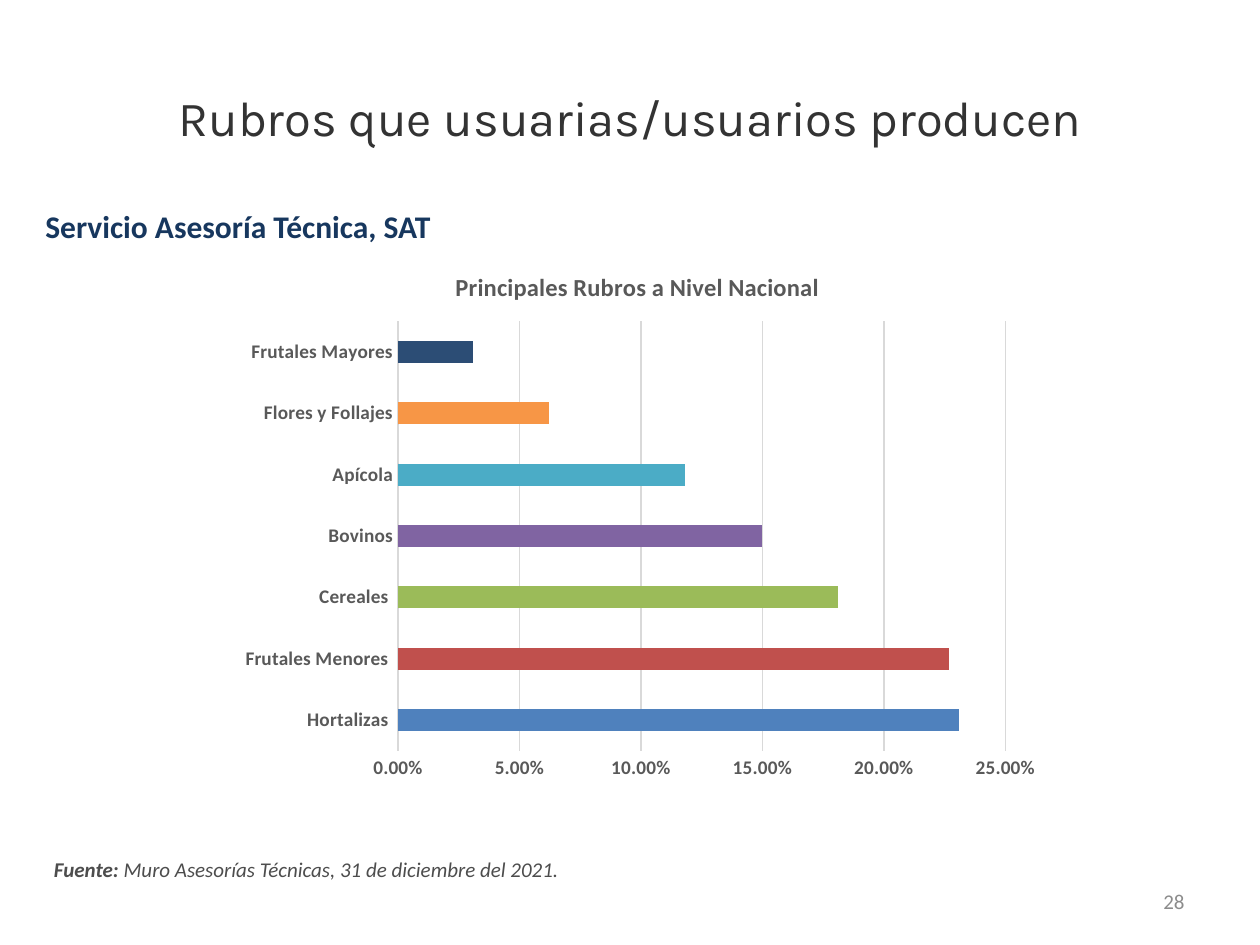
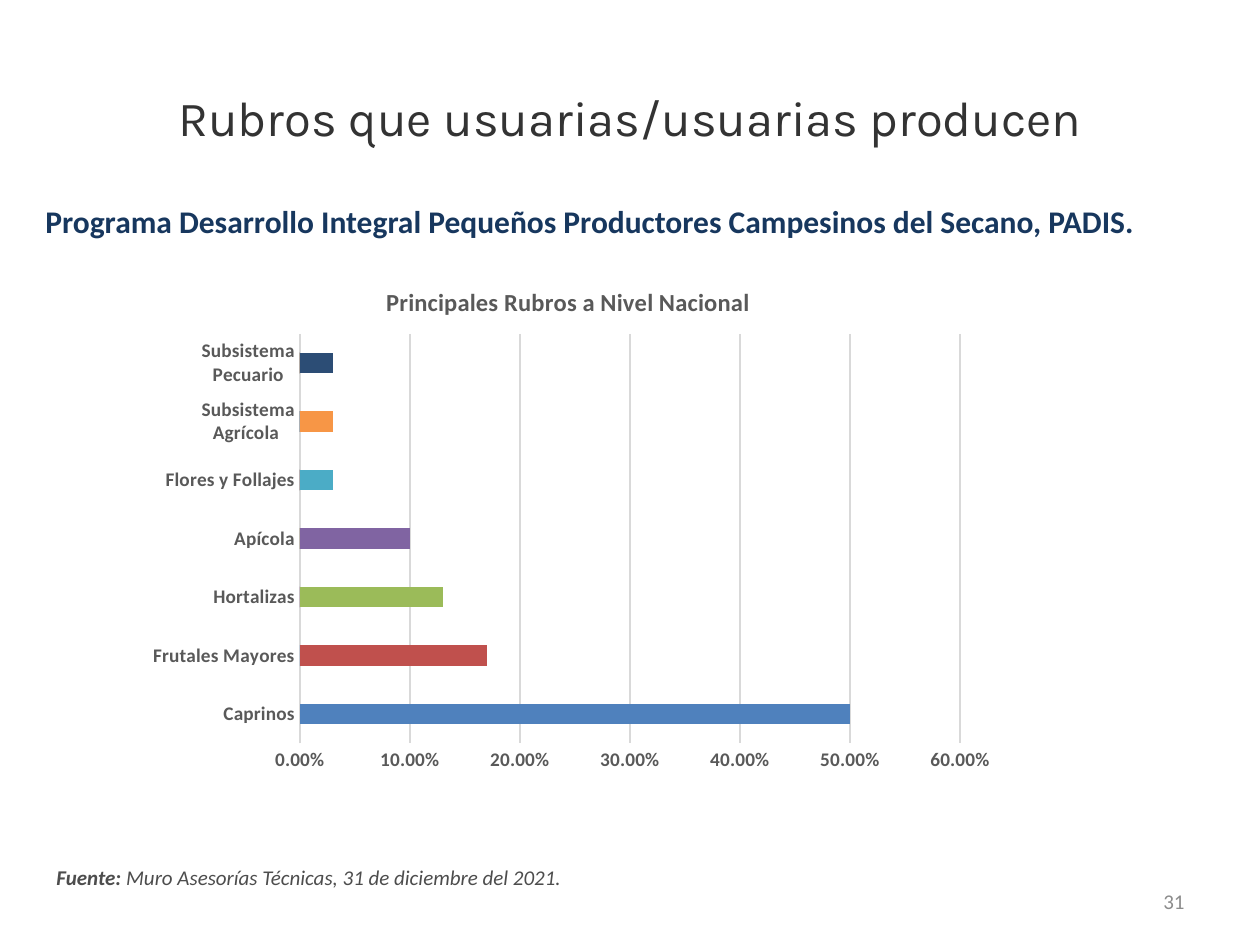
from lxml import etree
from pptx import Presentation
from pptx.chart.data import CategoryChartData as ChartData
from pptx.dml.color import RGBColor as RGB
from pptx.enum.chart import XL_CHART_TYPE as Kind, XL_TICK_MARK as Tick
from pptx.enum.text import MSO_ANCHOR as Anchor, PP_ALIGN as Align
from pptx.oxml.ns import qn
from pptx.util import Inches, Pt

HUES = {
    "title": "333333", "head": "17375E", "source": "4D4D4D",
    "page": "8C8C8C", "label": "595959", "grid": "D9D9D9",
}
BARS = ["4F81BD", "C0504D", "9BBB59", "8064A2", "4BACC6", "F79646", "2C4D75"]


def rgb(name):
    return RGB.from_string(HUES.get(name, name))


def place(parent, index, size, spots):
    """Fix a chart part at x, y (and w, h), in inches within the chart."""
    for old in parent.findall(qn("c:layout")):
        parent.remove(old)
    layout = etree.Element(qn("c:layout"))
    manual = etree.SubElement(layout, qn("c:manualLayout"))
    if len(spots) == 4:
        etree.SubElement(manual, qn("c:layoutTarget")).set("val", "inner")
    for mode in ("xMode", "yMode"):
        etree.SubElement(manual, qn("c:" + mode)).set("val", "edge")
    for key, spot, full in zip("xywh", spots, size * 2):
        etree.SubElement(manual, qn("c:" + key)).set("val", str(spot / full))
    parent.insert(index, layout)


class Deck:
    def __init__(self):
        self.prs = Presentation()
        self.prs.slide_width = Inches(10)
        self.prs.slide_height = Inches(7.5)
        self.slide = None

    def style(self, font, size, hue, bold=False, italic=False, face="Calibri"):
        font.name, font.size = face, Pt(size)
        font.bold, font.italic = bold, italic
        font.color.rgb = rgb(hue)

    def run(self, para, text, *look, **more):
        run = para.add_run()
        run.text = text
        self.style(run.font, *look, **more)

    def title(self, text):
        self.slide = self.prs.slides.add_slide(self.prs.slide_layouts[5])
        box = self.slide.shapes.title
        box.left, box.top = Inches(0.5), Inches(0.3)
        box.width, box.height = Inches(9), Inches(1.25)
        frame = box.text_frame
        frame.vertical_anchor = Anchor.MIDDLE
        para = frame.paragraphs[0]
        para.alignment = Align.CENTER
        self.run(para, text, 28, "title", face="Karla")

    def box(self, *at):
        frame = self.slide.shapes.add_textbox(*map(Inches, at)).text_frame
        frame.word_wrap = True
        return frame

    def head(self, text, top, width):
        frame = self.box(0.19, top, width, 5.19)
        frame.margin_left, frame.margin_top = Inches(0.17), Inches(0.08)
        self.run(frame.paragraphs[0], text, 18, "head", bold=True)

    def source(self, left, top):
        para = self.box(left, top, 6.26, 0.3).paragraphs[0]
        self.run(para, "Fuente: ", 12, "source", bold=True, italic=True)
        self.run(para, "Muro Asesorías Técnicas, 31 de diciembre del 2021.",
                 12, "source", italic=True)

    def page(self, number):
        frame = self.box(7.17, 6.95, 2.33, 0.4)
        frame.vertical_anchor = Anchor.MIDDLE
        para = frame.paragraphs[0]
        para.alignment = Align.RIGHT
        self.run(para, str(number), 12, "page")

    def chart(self, at, shares, top, step, name_at, plot_at):
        # One series per item, so that each bar has its own colour
        data = ChartData(number_format="0.00%")
        data.categories = list(shares)
        for row, share in enumerate(shares.values()):
            blank = None if row > 2 else 0
            rest = len(shares) - row - 1
            data.add_series(f"Series {row + 1}",
                            [blank] * row + [share] + [0] * rest)
        chart = self.slide.shapes.add_chart(
            Kind.BAR_STACKED, *map(Inches, at), data).chart
        chart.has_legend = False
        self.style(chart.font, 10, "000000")

        # Bars
        plot = chart.plots[0]
        plot.gap_width, plot.overlap = 182, 100
        plot.vary_by_categories = False
        for bar, hue in zip(plot.series, BARS):
            bar.format.fill.solid()
            bar.format.fill.fore_color.rgb = rgb(hue)

        # Axes
        cats, vals = chart.category_axis, chart.value_axis
        for axis in (cats, vals):
            axis.major_tick_mark = axis.minor_tick_mark = Tick.NONE
            self.style(axis.tick_labels.font, 11, "label", bold=True)
        vals.minimum_scale, vals.maximum_scale = 0, top
        vals.major_unit = step
        vals.tick_labels.number_format = "0.00%"
        vals.tick_labels.number_format_is_linked = False
        vals.has_major_gridlines = True
        vals.format.line.fill.background()
        for line in (cats.format.line, vals.major_gridlines.format.line):
            line.color.rgb = rgb("grid")
            line.width = Pt(0.75)

        # Chart title and places
        name = chart.chart_title
        self.run(name.text_frame.paragraphs[0],
                 "Principales Rubros a Nivel Nacional", 14, "label", bold=True)
        root = chart.element.find(qn("c:chart"))
        place(root.find(qn("c:title")), 1, at[2:], name_at)
        place(root.find(qn("c:plotArea")), 0, at[2:], plot_at)


def main():
    deck = Deck()

    # Technical advice service
    deck.title("Rubros que usuarias/usuarios producen")
    deck.head("Servicio Asesoría Técnica, SAT", 1.56, 9.23)
    deck.chart(
        (1.82, 1.99, 6.53, 4.29),
        {"Hortalizas ": 0.231, "Frutales Menores ": 0.227, "Cereales ": 0.181,
         "Bovinos": 0.15, "Apícola": 0.118, "Flores y Follajes": 0.062,
         "Frutales Mayores": 0.031},
        0.25, 0.05, (1.76, 0.12), (1.34, 0.56, 4.82, 3.41))
    deck.source(0.33, 6.75)
    deck.page(28)

    # Dryland programme
    deck.title("Rubros que usuarias/usuarias producen")
    deck.head("Programa Desarrollo Integral Pequeños Productores "
              "Campesinos del Secano, PADIS.", 1.52, 9.64)
    deck.chart(
        (1.11, 2.1, 6.89, 4.11),
        {"Caprinos": 0.5, "Frutales Mayores": 0.17, "Hortalizas": 0.13,
         "Apícola": 0.1, "Flores y Follajes": 0.03,
         "Subsistema Agrícola ": 0.03, "Subsistema Pecuario": 0.03},
        0.6, 0.1, (1.92, 0.13), (1.27, 0.55, 5.24, 3.25))
    deck.source(0.35, 6.81)
    deck.page(31)

    deck.prs.save("out.pptx")


if __name__ == "__main__":
    main()
